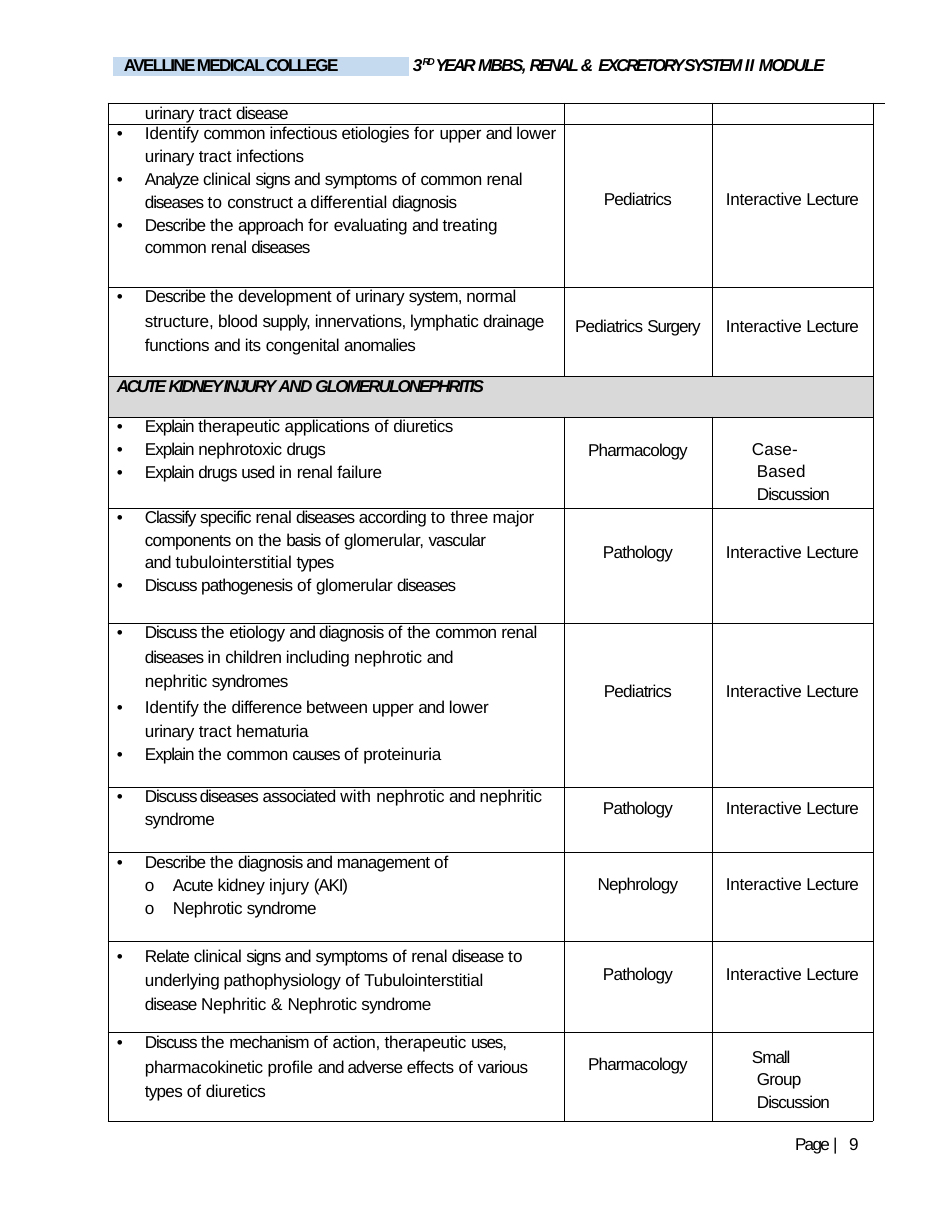
from itertools import groupby
from lxml import etree
from pptx import Presentation
from pptx import util as u
from pptx.dml.color import RGBColor
from pptx.enum import shapes, text
from pptx.oxml import ns

FONT, BLACK = "Arial", "000000"
LEFT, MID, RIGHT = text.PP_ALIGN.LEFT, text.PP_ALIGN.CENTER, text.PP_ALIGN.RIGHT
TALK = "Interactive Lecture"

# Letter spacing in points, by word; all other words take -0.3
TRACK = {
    2.2: "|",
    0.1: "for to with &",
    0: "of Case-Based Case- Based",
    -0.1: "tract Identify the in differential tubulointerstitial injury profile II",
    -0.2: "Interactive nephrotic nephritic lower failure therapeutic treating "
          "structure three major proteinuria its Tubulointerstitial Nephritic",
    -0.5: "common symptoms approach specific according components types management "
          "syndrome Acute Pediatrics Pathology Nephrology Lecture Group various "
          "drainage anomalies supply",
    -0.6: "and drugs diagnosis Describe mechanism pathogenesis Pharmacology adverse "
          "system vascular Relate associated syndromes 9",
    -0.7: "Explain used disease Discussion Analyze Small Surgery",
    -0.8: "diseases signs Discuss basis Classify a uses causes AKI 3",
    -1.1: "Page MBBS MODULE AND AVELLINE MEDICAL COLLEGE",
    -1.3: "KIDNEY INJURY GLOMERULONEPHRITIS RD",
    -1.6: "ACUTE YEAR RENAL EXCRETORY SYSTEM",
}
SPC = {word: val for val, words in TRACK.items() for word in words.split()}

# Rows: height, aims, line spacing, subject, its top, method, its top
ROWS = [
    (21, ["urinary tract disease"], 12.8, "", 0, "", 0),
    (163, ["• Identify common infectious etiologies for upper and lower",
           "urinary tract infections",
           "• Analyze clinical signs and symptoms of common renal\n"
           "diseases to construct a differential diagnosis",
           "• Describe the approach for evaluating and treating\ncommon renal diseases"],
     1.17, "Pediatrics", 66, TALK, 66),
    (89, ["• Describe the development of urinary system, normal",
          "structure, blood supply, innervations, lymphatic drainage\n"
          "functions and its congenital anomalies"],
     15.5, "Pediatrics Surgery", 30, TALK, 30),
    (41, ["ACUTE KIDNEY INJURY AND GLOMERULONEPHRITIS"], 13.2, None, 0, None, 0),
    (91, ["• Explain therapeutic applications of diuretics", "• Explain nephrotoxic drugs",
          "• Explain drugs used in renal failure"],
     1, "Pharmacology", 24, "Case-\nBased\nDiscussion", 20),
    (115, ["• Classify specific renal diseases according to three major",
           "components on the basis of glomerular, vascular\n"
           "and tubulointerstitial types",
           "• Discuss pathogenesis of glomerular diseases"],
     1.16, "Pathology", 35, TALK, 35),
    (164, ["• Discuss the etiology and diagnosis of the common renal",
           "diseases in children including nephrotic and\nnephritic syndromes",
           "• Identify the difference between upper and lower\nurinary tract hematuria",
           "• Explain the common causes of proteinuria"],
     15.5, "Pediatrics", 59, TALK, 59),
    (66, ["• Discuss diseases associated with nephrotic and nephritic", "syndrome"],
     1, "Pathology", 12, TALK, 12),
    (89, ["• Describe the diagnosis and management of", "o Acute kidney injury (AKI)",
          "o Nephrotic syndrome"], 1, "Nephrology", 22, TALK, 22),
    (91, ["• Relate clinical signs and symptoms of renal disease to\n"
          "underlying pathophysiology of Tubulointerstitial\n"
          "disease Nephritic & Nephrotic syndrome"],
     15.5, "Pathology", 23, TALK, 23),
    (89, ["• Discuss the mechanism of action, therapeutic uses,",
          "pharmacokinetic profile and adverse effects of various\ntypes of diuretics"],
     15.5, "Pharmacology", 22, "Small\nGroup\nDiscussion", 12),
]


def px(num):
    return u.Emu(round(num * 914400 / 112))


def tint(code):
    return RGBColor.from_string(code)


def put(obj, form):
    for key, val in form.items():
        setattr(obj, key, val)


def write(para, words, base=0, **form):
    """Write words as runs, one for each change of letter spacing."""
    for num, line in enumerate(words.split("\n")):
        if num:
            para.add_line_break()
        parts = line.split(" ")
        parts = [part + " " for part in parts[:-1]] + parts[-1:]
        for spc, group in groupby(filter(None, parts),
                                  lambda part: SPC.get(part.strip(" ,()"), -0.3)):
            run = para.add_run()
            run.text = "".join(group)
            put(run.font, {"name": FONT, "size": u.Pt(11), "bold": False,
                           "italic": False, **form})
            run.font.color.rgb = tint(BLACK)
            props = run._r.get_or_add_rPr()
            props.set("spc", str(round(spc * 100)))
            if base:
                props.set("baseline", str(base * 1000))


def indent(para, left, first=0, mark=None):
    props = para._p.get_or_add_pPr()
    props.set("marL", str(px(left)))
    props.set("indent", str(px(first)))
    if mark:
        etree.SubElement(props, ns.qn("a:buFont"), typeface=FONT)
        etree.SubElement(props, ns.qn("a:buChar"), char=mark)


def edge(cell, sides):
    """Draw the cell's borders; the fill must come after them."""
    props = cell._tc.get_or_add_tcPr()
    for num, side in enumerate(sides):
        line = etree.Element(ns.qn("a:ln" + side), w="6350")
        fill = etree.SubElement(line, ns.qn("a:solidFill"))
        etree.SubElement(fill, ns.qn("a:srgbClr"), val=BLACK)
        props.insert(num, line)


def frame(shape, left=0):
    put(shape.text_frame, {"margin_left": px(left), "margin_right": 0, "margin_top": 0,
                           "margin_bottom": 0, "word_wrap": True,
                           "auto_size": text.MSO_AUTO_SIZE.NONE,
                           "vertical_anchor": text.MSO_ANCHOR.TOP})
    para = shape.text_frame.paragraphs[0]
    para.alignment = LEFT
    return para


def header(slide, x, y):
    # College band
    band = slide.shapes.add_shape(shapes.MSO_SHAPE.RECTANGLE, px(x), px(y), px(296), px(19))
    band.shadow.inherit = False
    band.fill.solid()
    band.fill.fore_color.rgb = tint("C5D9EF")
    band.line.fill.background()
    para = frame(band, 11)
    para.line_spacing = u.Pt(11.6)
    write(para, "AVELLINE MEDICAL COLLEGE", bold=True)
    # Module title
    title = slide.shapes.title
    put(title, {"left": px(x + 300), "top": px(y - 3), "width": px(503), "height": px(22)})
    para = frame(title)
    bold = {"bold": True, "italic": True}
    write(para, "3", **bold)
    write(para, "RD ", base=32, **bold)
    write(para, "YEAR MBBS, RENAL & EXCRETORY SYSTEM II MODULE", **bold)


def aims(cell, items, space, bold):
    for num, item in enumerate(items):
        para = cell.text_frame.paragraphs[0] if not num else cell.text_frame.add_paragraph()
        mark = item[0] if item[:2] in ("• ", "o ") else None
        left = 9 if bold else 65 if mark == "o" else 37
        indent(para, left, -28 if mark else 0, mark)
        many = "\n" in item
        if many or len(items) == 1:
            para.line_spacing = u.Pt(space) if space > 2 else space
        if num:
            para.space_before = u.Pt(0.8 if many else 2.5)
        write(para, item[2:] if mark else item, bold=bold, italic=bold)


def label(cell, words, top, align):
    cell.margin_top = px(top)
    para = cell.text_frame.paragraphs[0]
    if "\n" in words:
        indent(para, 45, -5)
        para.line_spacing = 1.17
    else:
        para.alignment = align
        if align == RIGHT:
            cell.margin_right = px(14)
    write(para, words)


def grid(slide, x, y):
    cols = (456, 148, 161, 13)
    table = slide.shapes.add_table(len(ROWS), len(cols), px(x), px(y), px(sum(cols)),
                                   px(sum(row[0] for row in ROWS))).table
    put(table, {"first_row": False, "horz_banding": False})
    for col, wide in zip(table.columns, cols):
        col.width = px(wide)
    for num, (high, items, space, field, ftop, way, wtop) in enumerate(ROWS):
        table.rows[num].height = px(high)
        cells = [table.cell(num, col) for col in range(len(cols))]
        band = field is None
        for cell in cells:
            put(cell, dict.fromkeys(("margin_left", "margin_right", "margin_top",
                                     "margin_bottom"), 0))
            if band and cell is not cells[-1]:
                cell.fill.solid()
                cell.fill.fore_color.rgb = tint("D9D9D9")
            else:
                cell.fill.background()
            edge(cell, "LRTB" if cell is not cells[-1] else "L" if num else "LT")
        aims(cells[0], items, space, band)
        if field:
            label(cells[1], field, ftop, MID)
            label(cells[2], way, wtop, RIGHT)
        # Small type keeps empty cells from stretching the row
        for cell in cells:
            if not cell.text_frame.text:
                etree.SubElement(cell.text_frame.paragraphs[0]._p,
                                 ns.qn("a:endParaRPr"), sz="800")
        if band:
            cells[0].merge(cells[2])
    table.cell(0, 3).merge(table.cell(len(ROWS) - 1, 3))


def footer(slide, x, y):
    box = slide.shapes.add_textbox(px(x), px(y), px(72), px(20))
    para = frame(box)
    indent(para, 1)
    para.line_spacing = u.Pt(11.5)
    write(para, "Page | 9")


def main():
    deck = Presentation()
    put(deck, {"slide_width": px(952), "slide_height": px(1232)})
    slide = deck.slides.add_slide(deck.slide_layouts[5])
    header(slide, 113, 57)
    grid(slide, 108, 103)
    footer(slide, 794, 1136)
    deck.save("out.pptx")


if __name__ == "__main__":
    main()
